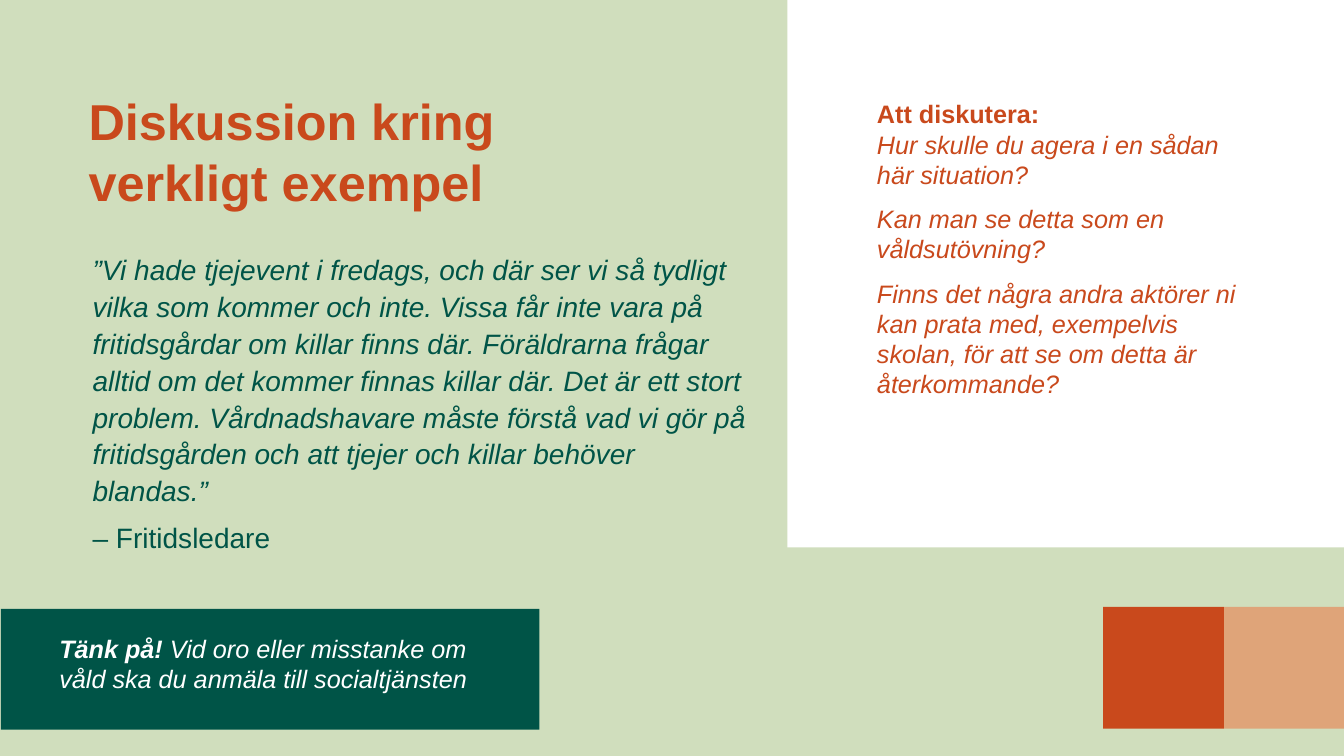
import pptx
import pptx.util
import pptx.dml.color
import pptx.enum.shapes
import pptx.enum.text
from dataclasses import dataclass

Inches = pptx.util.Inches
Pt = pptx.util.Pt


@dataclass(frozen=True)
class Theme:
    sage: str = "D0DEBD"
    rust: str = "C9491C"
    sand: str = "DFA479"
    green: str = "005447"
    white: str = "FFFFFF"
    face: str = "Arial"
    title: int = 36
    quote: int = 20
    note: int = 18


THEME = Theme()


def color(code):
    return pptx.dml.color.RGBColor.from_string(code)


def add_block(shapes, box, fill):
    kind = pptx.enum.shapes.MSO_SHAPE.RECTANGLE
    block = shapes.add_shape(kind, *map(Inches, box))
    block.shadow.inherit = False
    block.fill.solid()
    block.fill.fore_color.rgb = color(fill)
    block.line.fill.background()


def add_run(para, text, size, tint, **style):
    for row, line in enumerate(text.split("\n")):
        if row:
            para.add_line_break()
        if line:
            run = para.add_run()
            run.text = line
            look = {"name": THEME.face, "size": Pt(size), **style}
            for key, value in look.items():
                setattr(run.font, key, value)
            run.font.color.rgb = color(tint)


def add_text(shapes, box, size, tint, paras, anchor="TOP"):
    frame = shapes.add_textbox(*map(Inches, box)).text_frame
    frame.word_wrap = True
    frame.vertical_anchor = pptx.enum.text.MSO_ANCHOR[anchor]
    for row, (form, runs) in enumerate(paras):
        para = frame.add_paragraph() if row else frame.paragraphs[0]
        for key, value in form.items():
            setattr(para, key, value)
        for text, style in runs:
            add_run(para, text, size, tint, **style)


def main():
    deck = pptx.Presentation()
    deck.slide_width = Inches(13.33)
    deck.slide_height = Inches(7.5)
    slide = deck.slides.add_slide(deck.slide_layouts[6])
    shapes = slide.shapes
    bold, slant = {"bold": True}, {"italic": True}
    gap = {"space_before": Pt(10)}

    back = slide.background.fill
    back.solid()
    back.fore_color.rgb = color(THEME.sage)

    pair = shapes.add_group_shape().shapes
    for col, fill in enumerate((THEME.rust, THEME.sand)):
        add_block(pair, (10.94 + 1.2 * col, 6.02, 1.2, 1.21), fill)

    add_text(shapes, (0.78, 0.26, 7.29, 1.89), THEME.title, THEME.rust, [
        ({"line_spacing": Pt(44)},
         [("Diskussion kring\nverkligt exempel", bold)]),
    ], "BOTTOM")

    quote = (
        "”Vi hade tjejevent i fredags, och där ser vi så tydligt vilka som "
        "kommer och inte. Vissa får inte vara på fritidsgårdar om killar "
        "finns där. Föräldrarna frågar alltid om det kommer finnas killar "
        "där. Det är ett stort problem. Vårdnadshavare måste förstå vad vi "
        "gör på fritidsgården och att tjejer och killar behöver blandas.”"
    )
    add_text(shapes, (0.82, 2.42, 6.72, 2.62), THEME.quote, THEME.green, [
        ({"line_spacing": 1.1}, [(quote, slant)]),
        ({"line_spacing": Pt(23), **gap}, [("– Fritidsledare", {})]),
    ])

    add_block(shapes, (7.81, -0.01, 5.53, 5.44), THEME.white)
    add_text(shapes, (8.6, 0.93, 3.93, 3.55), THEME.note, THEME.rust, [
        ({}, [("Att diskutera:\n", bold),
              ("Hur skulle du agera i en sådan här situation?", slant)]),
        (gap, [("Kan man se detta som en våldsutövning?", slant)]),
        (gap, [("Finns det några andra aktörer ni kan prata med, exempelvis "
                "skolan, för att se om detta är återkommande?", slant)]),
    ])

    add_block(shapes, (0.01, 6.04, 5.34, 1.2), THEME.green)
    add_text(shapes, (0.49, 6.23, 4.35, 1.01), THEME.note, THEME.white, [
        ({}, [("Tänk på! ", {**bold, **slant}),
              ("Vid oro eller misstanke om\n"
               "våld ska du anmäla till socialtjänsten", slant)]),
    ])

    deck.save("out.pptx")


if __name__ == "__main__":
    main()
